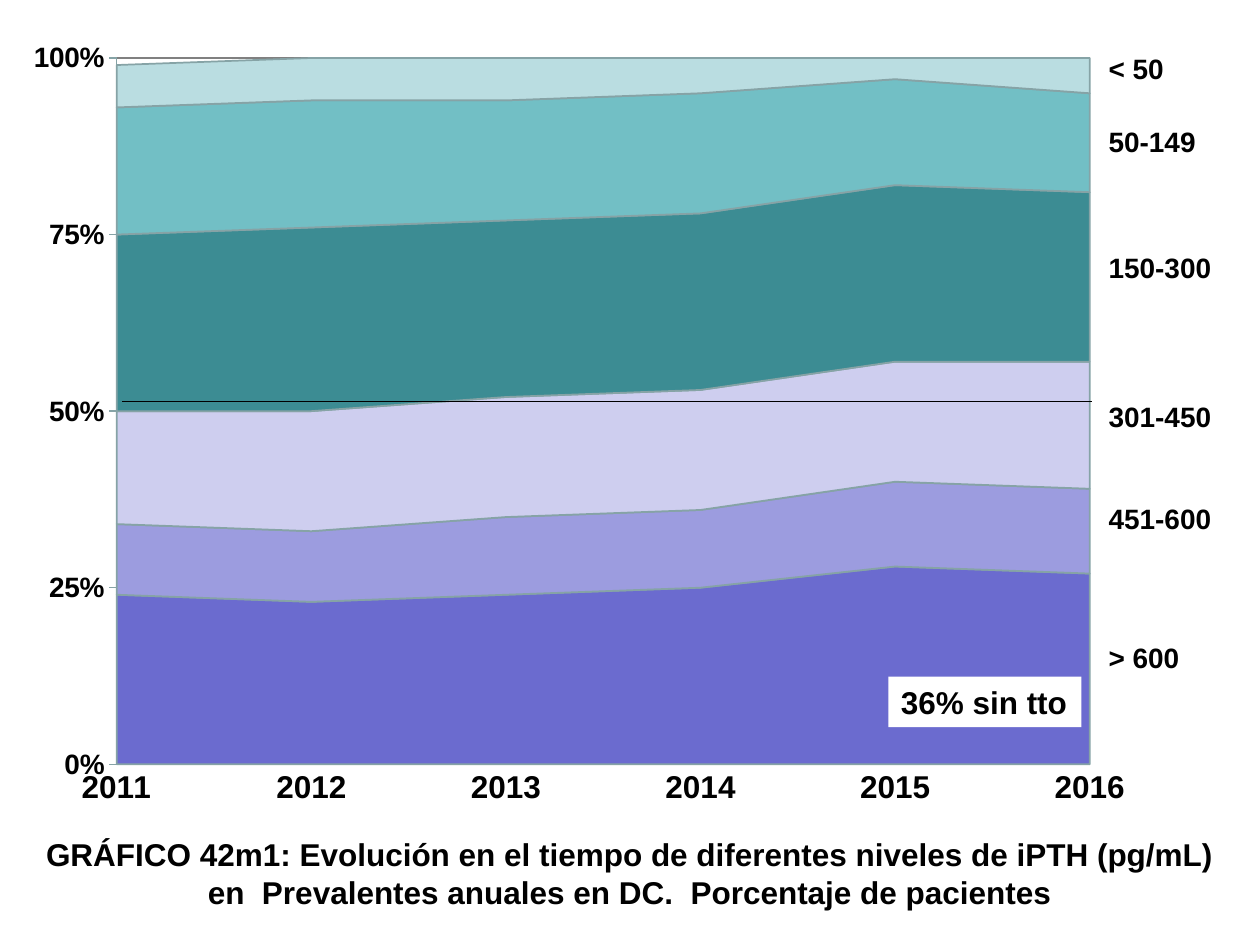
import pptx
import pptx.chart.data
import pptx.dml.color
import pptx.enum.chart
import pptx.enum.shapes
import pptx.enum.text
import pptx.oxml
import pptx.oxml.ns
import pptx.util
from lxml import etree

Cm = pptx.util.Cm
FONT = "Arial"
BLACK, WHITE, OUTLINE = "000000", "FFFFFF", "86A3A6"

YEARS = ["2011", "2012", "2013", "2014", "2015", "2016"]
SERIES = [  # colour, share of patients per year
    ("6B6BCF", [0.24, 0.23, 0.24, 0.25, 0.28, 0.27]),
    ("9C9CDF", [0.10, 0.10, 0.11, 0.11, 0.12, 0.12]),
    ("CECEEF", [0.16, 0.17, 0.17, 0.17, 0.17, 0.18]),
    ("3C8C93", [0.25, 0.26, 0.25, 0.25, 0.25, 0.24]),
    ("72BFC5", [0.18, 0.18, 0.17, 0.17, 0.15, 0.14]),
    ("BADDE1", [0.06, 0.06, 0.06, 0.05, 0.05, 0.05]),
]
LEVELS = [  # label, top and width in cm
    ("< 50", 0.0, 1.65),
    ("50-149", 1.48, 2.29),
    ("150-300", 4.02, 2.59),
    ("301-450", 7.01, 2.59),
    ("451-600", 9.07, 2.59),
    ("> 600", 11.87, 1.96),
]
PLOT = {"x": 0.09, "y": 0.04, "w": 0.86, "h": 0.89}  # shares of the chart box
CAPTION = ("GRÁFICO 42m1: Evolución en el tiempo de diferentes niveles de iPTH (pg/mL) "
           "en  Prevalentes anuales en DC.  Porcentaje de pacientes")


def colour(value):
    return pptx.dml.color.RGBColor.from_string(value)


def set_all(target, values):
    for name, value in values.items():
        setattr(target, name, value)


def format_font(font, size):
    set_all(font, {"name": FONT, "size": pptx.util.Pt(size), "bold": True})
    font.color.rgb = colour(BLACK)


def write(frame, text, size, align, **values):
    set_all(frame, values)
    para = frame.paragraphs[0]
    para.alignment = align
    span = para.add_run()
    span.text = text
    format_font(span.font, size)


def format_line(line, value, width=0.75):
    line.color.rgb = colour(value)
    line.width = pptx.util.Pt(width)


def fix_plot_area(chart):
    """Give the inner plot area its fixed place in the chart box."""
    area = chart._chartSpace.chart.plotArea
    for old in area.findall(pptx.oxml.ns.qn("c:layout")):
        area.remove(old)
    modes = '<c:xMode val="edge"/><c:yMode val="edge"/>'
    sizes = "".join(f'<c:{key} val="{share}"/>' for key, share in PLOT.items())
    area.insert(0, pptx.oxml.parse_xml(
        f'<c:layout {pptx.oxml.ns.nsdecls("c")}><c:manualLayout>'
        f'<c:layoutTarget val="inner"/>{modes}{sizes}</c:manualLayout></c:layout>'))


def add_area_chart(page, left, top, width, height):
    data = pptx.chart.data.CategoryChartData(number_format="0%")
    data.categories = YEARS
    for number, (_, shares) in enumerate(SERIES, 1):
        data.add_series(f"Series {number}", shares)
    chart = page.shapes.add_chart(
        pptx.enum.chart.XL_CHART_TYPE.AREA_STACKED,
        Cm(left), Cm(top), Cm(width), Cm(height), data).chart
    set_all(chart, {"has_legend": False, "has_title": False})
    format_font(chart.font, 18)
    fix_plot_area(chart)

    for series, (fill, _) in zip(chart.plots[0].series, SERIES):
        series.format.fill.solid()
        series.format.fill.fore_color.rgb = colour(fill)
        format_line(series.format.line, OUTLINE, 1)

    marks = pptx.enum.chart.XL_TICK_MARK
    years, shares = chart.category_axis, chart.value_axis
    set_all(years, {"major_tick_mark": marks.NONE, "minor_tick_mark": marks.NONE,
                    "has_major_gridlines": False})
    set_all(shares, {"minimum_scale": 0, "maximum_scale": 1, "major_unit": 0.25,
                     "major_tick_mark": marks.OUTSIDE, "minor_tick_mark": marks.NONE,
                     "has_major_gridlines": True})
    set_all(shares.tick_labels, {"number_format": "0%", "number_format_is_linked": False})
    format_line(shares.major_gridlines.format.line, "808080")
    for axis, size in ((years, 18), (shares, 16)):
        format_font(axis.tick_labels.font, size)
        format_line(axis.format.line, OUTLINE)


def add_half_line(page, left, top, width):
    line = page.shapes.add_connector(
        pptx.enum.shapes.MSO_CONNECTOR.STRAIGHT,
        Cm(left), Cm(top), Cm(left + width), Cm(top))
    format_line(line.line, BLACK)
    etree.SubElement(line._element.spPr, pptx.oxml.ns.qn("a:effectLst"))


def add_level_labels(page, left, top):
    for text, offset, width in LEVELS:
        box = page.shapes.add_textbox(Cm(left), Cm(top + offset), Cm(width), Cm(0.94))
        write(box.text_frame, text, 16, pptx.enum.text.PP_ALIGN.LEFT, word_wrap=False,
              auto_size=pptx.enum.text.MSO_AUTO_SIZE.SHAPE_TO_FIT_TEXT)


def add_note(page, left, top, width, height):
    box = page.shapes.add_shape(pptx.enum.shapes.MSO_SHAPE.RECTANGLE,
                                Cm(left), Cm(top), Cm(width), Cm(height))
    box.shadow.inherit = False
    box.fill.solid()
    box.fill.fore_color.rgb = colour(WHITE)
    box.line.fill.background()
    write(box.text_frame, "36% sin tto", 18, pptx.enum.text.PP_ALIGN.LEFT, word_wrap=False,
          auto_size=pptx.enum.text.MSO_AUTO_SIZE.SHAPE_TO_FIT_TEXT,
          vertical_anchor=pptx.enum.text.MSO_ANCHOR.TOP)


def place_caption(page, left, top, width, height):
    title = page.shapes.title
    set_all(title, {"left": Cm(left), "top": Cm(top),
                    "width": Cm(width), "height": Cm(height)})
    write(title.text_frame, CAPTION, 18, pptx.enum.text.PP_ALIGN.CENTER, word_wrap=True,
          auto_size=pptx.enum.text.MSO_AUTO_SIZE.NONE,
          vertical_anchor=pptx.enum.text.MSO_ANCHOR.TOP)


def main():
    deck = pptx.Presentation()
    set_all(deck, {"slide_width": Cm(25.4), "slide_height": Cm(19.05)})
    page = deck.slides.add_slide(deck.slide_layouts.get_by_name("Title Only"))
    add_area_chart(page, 0.3, 0.53, 22.81, 16)
    place_caption(page, 0.3, 16.71, 24.79, 1.8)
    add_half_line(page, 2.46, 8.1, 19.56)
    add_level_labels(page, 22.1, 0.91)
    add_note(page, 17.91, 13.64, 3.89, 1.02)
    deck.save("out.pptx")


if __name__ == "__main__":
    main()
